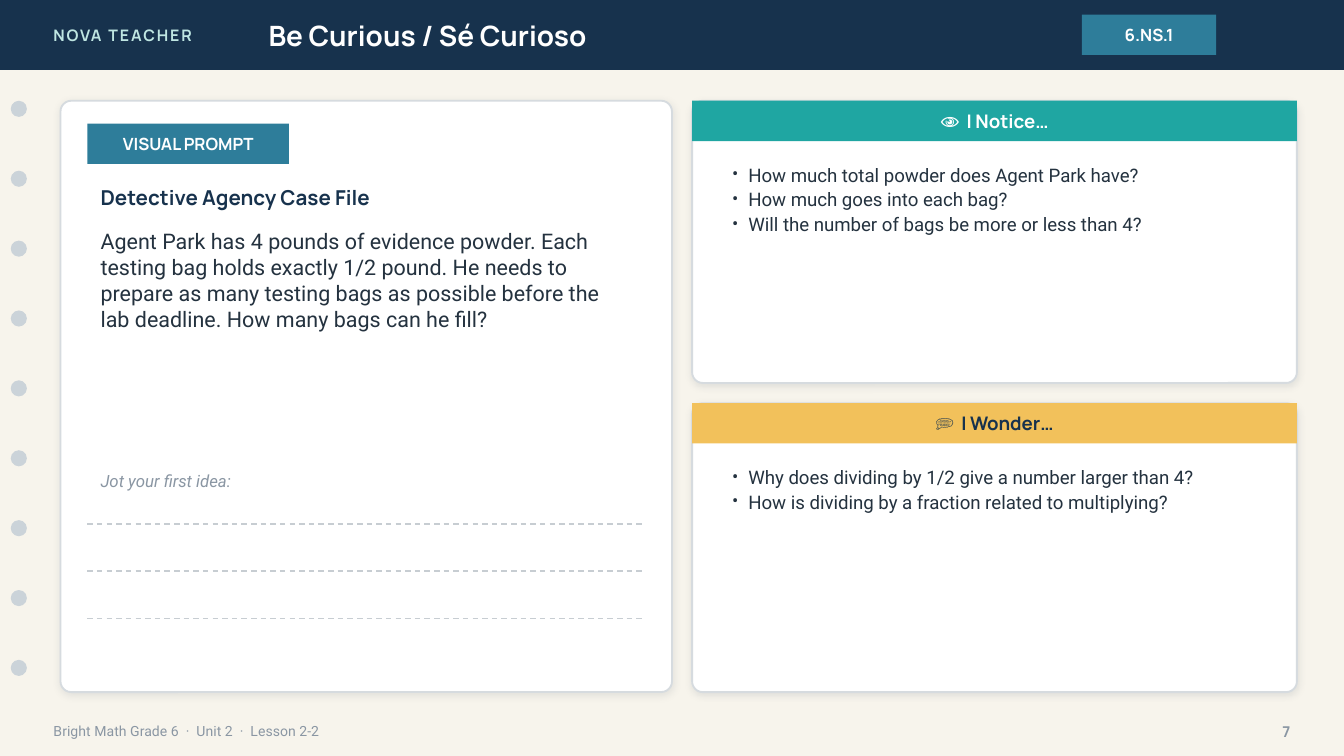
"""Build the Be Curious lesson slide."""
import pptx
import pptx.dml.color
import pptx.enum.dml
import pptx.enum.shapes
import pptx.enum.text
import pptx.oxml.ns
import pptx.util
from lxml import etree

Inches = pptx.util.Inches
Pt = pptx.util.Pt
SHAPE = pptx.enum.shapes.MSO_SHAPE
ALIGN = pptx.enum.text.PP_ALIGN
ANCHOR = pptx.enum.text.MSO_ANCHOR
qn = pptx.oxml.ns.qn

NAVY, BLUE, INK, GRAY, WHITE = "17324D", "2E7D9A", "24323F", "8A96A3", "FFFFFF"


def color(value):
    return pptx.dml.color.RGBColor.from_string(value)


def write(frame, text, size=10, font="Manrope", ink=WHITE, bold=False, italic=False,
          align=ALIGN.LEFT, anchor=ANCHOR.MIDDLE, tracking=0, bullet=False):
    frame.word_wrap = True
    frame.vertical_anchor = anchor
    for index, line in enumerate(text.split("\n")):
        para = frame.add_paragraph() if index else frame.paragraphs[0]
        if bullet:
            properties = para._p.get_or_add_pPr()
            properties.set("marL", str(Inches(0.12)))
            properties.set("indent", str(-Inches(0.12)))
            etree.SubElement(properties, qn("a:buFont"), typeface=font)
            etree.SubElement(properties, qn("a:buChar"), char="•")
            para.line_spacing = 1.1
        para.alignment = align
        span = para.add_run()
        span.text = line
        span.font.size = Pt(size)
        span.font.name = font
        span.font.bold = bold
        span.font.italic = italic
        span.font.color.rgb = color(ink)
        if tracking:
            span.font._element.set("spc", str(int(tracking * 100)))


class Painter:
    def __init__(self, page):
        self.page = page

    def shape(self, left, top, width, height, fill, kind=SHAPE.RECTANGLE):
        box = self.page.shapes.add_shape(
            kind, Inches(left), Inches(top), Inches(width), Inches(height))
        box.shadow.inherit = False
        box.fill.solid()
        box.fill.fore_color.rgb = color(fill)
        box.line.fill.background()
        return box

    def label(self, left, top, width, height, fill, text, **style):
        box = self.shape(left, top, width, height, fill)
        write(box.text_frame, text, bold=True, align=ALIGN.CENTER, **style)

    def card(self, left, top, width, height):
        box = self.shape(left, top, width, height, WHITE, SHAPE.ROUNDED_RECTANGLE)
        box.adjustments[0] = 0.08 / min(width, height)
        box.line.color.rgb = color("D6DBDF")
        box.line.width = Pt(1)
        effects = box._element.spPr.find(qn("a:effectLst"))
        shadow = etree.SubElement(
            effects, qn("a:outerShdw"), blurRad=str(Pt(4)), dist=str(Pt(1)),
            dir="5400000", algn="bl", rotWithShape="0")
        tint = etree.SubElement(shadow, qn("a:srgbClr"), val="1C2E42")
        etree.SubElement(tint, qn("a:alpha"), val="10000")

    def text(self, left, top, width, height, text, **style):
        box = self.page.shapes.add_textbox(
            Inches(left), Inches(top), Inches(width), Inches(height))
        write(box.text_frame, text, **style)

    def rule(self, left, right, top):
        line = self.page.shapes.add_connector(
            pptx.enum.shapes.MSO_CONNECTOR.STRAIGHT,
            Inches(left), Inches(top), Inches(right), Inches(top))
        line.line.color.rgb = color("C7CDD2")
        line.line.width = Pt(0.75)
        line.line.dash_style = pptx.enum.dml.MSO_LINE.DASH
        etree.SubElement(line._element.spPr, qn("a:effectLst"))

    def panel(self, top, height, fill, ink, heading, questions):
        left, width = 5.15, 4.5
        self.card(left, top, width, height)
        self.label(left, top, width, 0.3, fill, heading, ink=ink)
        self.text(left + 0.2, top + 0.4, width - 0.4, height - 0.5, questions,
                  font="Roboto", ink=INK, anchor=ANCHOR.TOP, bullet=True)


def main():
    deck = pptx.Presentation()
    deck.slide_width, deck.slide_height = Inches(10), Inches(10 * 9 / 16)
    page = deck.slides.add_slide(deck.slide_layouts[6])
    page.background.fill.solid()
    page.background.fill.fore_color.rgb = color("F7F4EC")
    paint = Painter(page)

    paint.shape(0, 0, 10, 0.52, NAVY)
    paint.text(0.3, 0, 2.4, 0.52, "NOVA TEACHER", size=8.5, ink="BFE6E2", bold=True, tracking=1)
    paint.text(1.9, 0, 5.6, 0.52, "Be Curious / Sé Curioso", size=15, bold=True)
    paint.label(8.05, 0.11, 1, 0.3, BLUE, "6.NS.1", size=9)

    for hole in range(9):
        paint.shape(0.08, 0.75 + 0.52 * hole, 0.12, 0.12, "CBD3D9", SHAPE.OVAL)

    paint.text(0.3, 5.3, 7, 0.28, "Bright Math Grade 6  ·  Unit 2  ·  Lesson 2-2",
               size=7.5, font="Roboto", ink=GRAY)
    paint.text(9.2, 5.3, 0.5, 0.28, "7", size=8, ink=GRAY, bold=True, align=ALIGN.RIGHT)

    paint.card(0.45, 0.75, 4.55, 4.4)
    paint.label(0.65, 0.92, 1.5, 0.3, BLUE, "VISUAL PROMPT", size=9)
    paint.text(0.65, 1.32, 4.15, 0.3, "Detective Agency Case File", size=11, ink=NAVY, bold=True)
    paint.text(0.65, 1.65, 4.15, 1.7,
               "Agent Park has 4 pounds of evidence powder. Each testing bag holds exactly "
               "1/2 pound. He needs to prepare as many testing bags as possible before the "
               "lab deadline. How many bags can he fill?",
               size=11.5, font="Roboto", ink=INK, anchor=ANCHOR.TOP)
    paint.text(0.65, 3.45, 4, 0.25, "Jot your first idea:",
               size=9, font="Roboto", ink=GRAY, italic=True)
    for row in range(3):
        paint.rule(0.65, 4.8, 3.9 + 0.35 * row)

    paint.panel(0.75, 2.1, "1FA6A2", WHITE, "👁  I Notice…",
                "How much total powder does Agent Park have?\n"
                "How much goes into each bag?\n"
                "Will the number of bags be more or less than 4?")
    paint.panel(3, 2.15, "F2C15B", NAVY, "💭  I Wonder…",
                "Why does dividing by 1/2 give a number larger than 4?\n"
                "How is dividing by a fraction related to multiplying?")
    deck.save("out.pptx")


if __name__ == "__main__":
    main()
